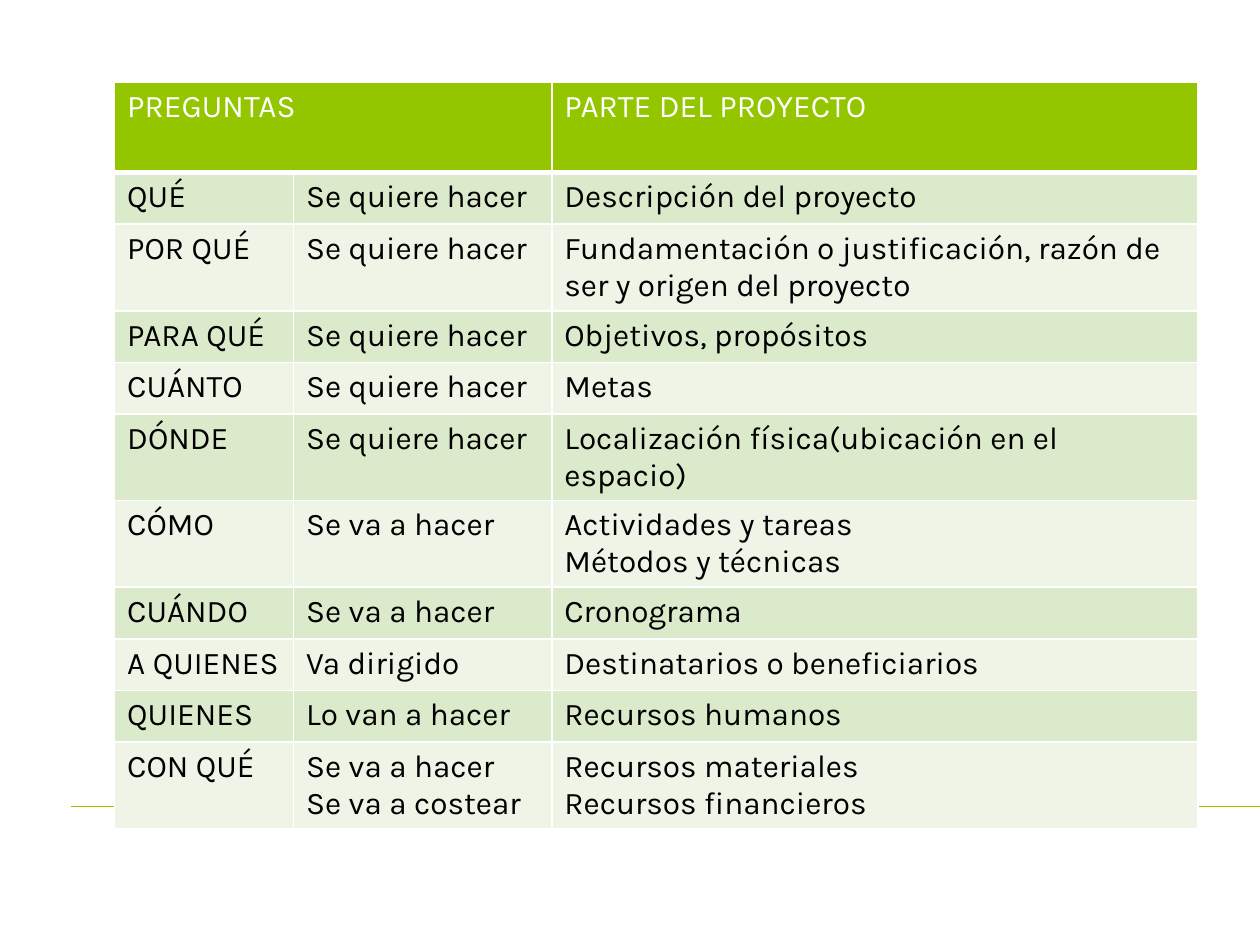
"""Build a slide with a table that links planning questions to project parts."""
from lxml.etree import SubElement
from pptx import Presentation
from pptx.dml.color import RGBColor
from pptx.enum.shapes import MSO_CONNECTOR
from pptx.oxml.ns import qn
from pptx.util import Inches, Pt

GREEN = RGBColor(0x94, 0xC6, 0x00)
BAND_DARK = RGBColor(0xDC, 0xEA, 0xCC)
BAND_LIGHT = RGBColor(0xEE, 0xF5, 0xE7)
WHITE = RGBColor(0xFF, 0xFF, 0xFF)
BLACK = RGBColor(0x00, 0x00, 0x00)
FONT = "Karla"

ROWS = [
    ("PREGUNTAS", "", "PARTE DEL PROYECTO"),
    ("QUÉ", "Se quiere hacer", "Descripción del proyecto"),
    ("POR QUÉ", "Se quiere hacer",
     "Fundamentación o justificación, razón de ser y origen del proyecto"),
    ("PARA QUÉ", "Se quiere hacer", "Objetivos, propósitos"),
    ("CUÁNTO", "Se quiere hacer", "Metas"),
    ("DÓNDE", "Se quiere hacer", "Localización física(ubicación en el espacio)"),
    ("CÓMO", "Se va a hacer", "Actividades y tareas\nMétodos y técnicas"),
    ("CUÁNDO", "Se va a hacer", "Cronograma"),
    ("A QUIENES", "Va dirigido", "Destinatarios o beneficiarios"),
    ("QUIENES", "Lo van a hacer", "Recursos humanos"),
    ("CON QUÉ", "Se va a hacer\nSe va a costear",
     "Recursos materiales\nRecursos financieros"),
]
COL_WIDTHS = (1.42, 2.05, 5.13)
HEADER_HEIGHT, ROW_HEIGHT = 0.72, 0.41


def set_borders(cell, bottom):
    tcPr = cell._tc.get_or_add_tcPr()
    for side, width in (("L", 1), ("R", 1), ("T", 1), ("B", bottom)):
        ln = SubElement(tcPr, qn(f"a:ln{side}"), w=str(Pt(width)))
        fill = SubElement(ln, qn("a:solidFill"))
        SubElement(fill, qn("a:srgbClr"), val=str(WHITE))


def write_cell(cell, text, color):
    tf = cell.text_frame
    for i, line in enumerate(text.split("\n")):
        p = tf.add_paragraph() if i else tf.paragraphs[0]
        r = p.add_run()
        r.text = line
        r.font.name, r.font.size = FONT, Pt(18)
        r.font.color.rgb = color


def add_rule(slide):
    line = slide.shapes.add_connector(
        MSO_CONNECTOR.STRAIGHT, Inches(0.56), Inches(6.4), Inches(10), Inches(6.4))
    line.line.color.rgb = GREEN
    line.line.width = Pt(0.75)
    SubElement(line._element.spPr, qn("a:effectLst"))


def add_questions_table(slide):
    height = HEADER_HEIGHT + ROW_HEIGHT * (len(ROWS) - 1)
    table = slide.shapes.add_table(
        len(ROWS), len(COL_WIDTHS), Inches(0.91), Inches(0.65),
        Inches(sum(COL_WIDTHS)), Inches(height)).table
    for col, width in zip(table.columns, COL_WIDTHS):
        col.width = Inches(width)
    table.cell(0, 0).merge(table.cell(0, 1))
    for i, row in enumerate(ROWS):
        header = i == 0
        table.rows[i].height = Inches(HEADER_HEIGHT if header else ROW_HEIGHT)
        fill = GREEN if header else BAND_DARK if i % 2 else BAND_LIGHT
        for j, text in enumerate(row):
            cell = table.cell(i, j)
            set_borders(cell, 3 if header else 1)
            cell.fill.solid()
            cell.fill.fore_color.rgb = fill
            if text:
                write_cell(cell, text, WHITE if header else BLACK)


def main():
    prs = Presentation()
    prs.slide_width, prs.slide_height = Inches(10), Inches(7.5)
    slide = prs.slides.add_slide(prs.slide_layouts[6])
    add_rule(slide)
    add_questions_table(slide)
    prs.save("out.pptx")


if __name__ == "__main__":
    main()
